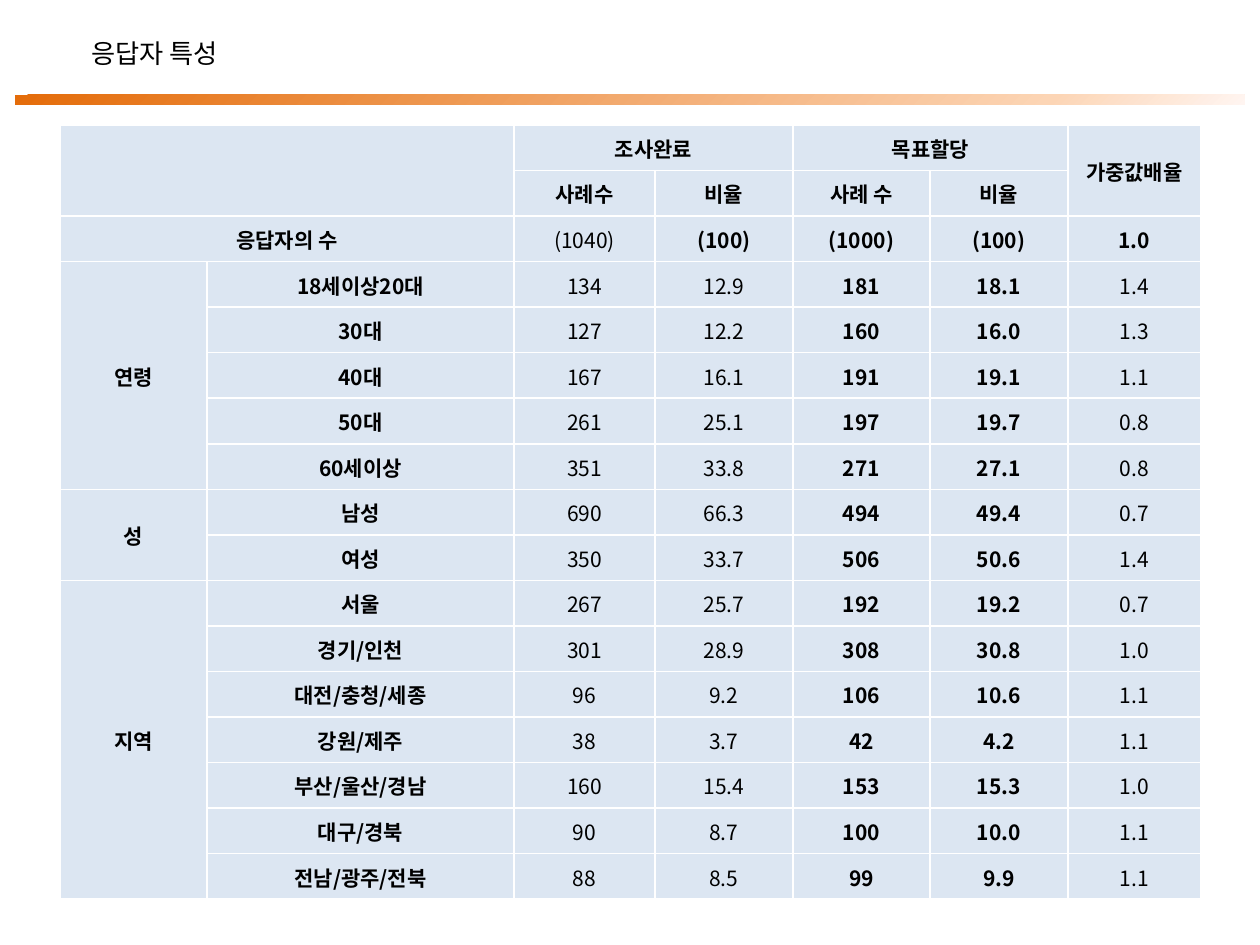
"""Build the respondent profile slide with its weighting table."""
from copy import deepcopy
from dataclasses import dataclass

from lxml import etree
from pptx import Presentation
from pptx.dml.color import RGBColor
from pptx.enum.shapes import MSO_SHAPE
from pptx.enum.text import MSO_ANCHOR, MSO_AUTO_SIZE, PP_ALIGN
from pptx.oxml.ns import qn
from pptx.util import Pt

RECTANGLE = MSO_SHAPE.RECTANGLE
MIDDLE = MSO_ANCHOR.MIDDLE
NO_AUTOFIT = MSO_AUTO_SIZE.NONE
LEFT, CENTER = PP_ALIGN.LEFT, PP_ALIGN.CENTER
PX = 914400 // 126


@dataclass
class Theme:
    font: str = "Noto Sans CJK KR"
    title_size: int = 15
    cell_size: int = 12
    ink: str = "000000"
    cell: str = "DCE6F2"
    border: str = "FFFFFF"
    bar: tuple = ((0, "E46C0A"), (0.84, "FCD5B5"), (1, "FFF5F1"))


theme = Theme()


def style(p, size, bold, align):
    p.alignment = align
    p.font.name = theme.font
    p.font.size = Pt(size)
    p.font.bold = bold
    p.font.color.rgb = RGBColor.from_string(theme.ink)
    latin = p.font._element.find(qn("a:latin"))
    latin.addnext(etree.Element(qn("a:ea"), typeface=theme.font))


def add_borders(cell):
    tcPr = cell._tc.get_or_add_tcPr()
    for side in ("lnL", "lnR", "lnT", "lnB"):
        ln = etree.SubElement(tcPr, qn(f"a:{side}"), w=str(Pt(1)))
        fill = etree.SubElement(ln, qn("a:solidFill"))
        etree.SubElement(fill, qn("a:srgbClr"), val=theme.border)


prs = Presentation()
prs.slide_width, prs.slide_height = 1260 * PX, 945 * PX
s = prs.slides.add_slide(prs.slide_layouts[5])

title = s.shapes.title
title.left, title.top, title.width, title.height = 79 * PX, 31 * PX, 387 * PX, 44 * PX
tf = title.text_frame
tf.text = "응답자 특성"
tf.auto_size = NO_AUTOFIT
tf.vertical_anchor = MIDDLE
style(tf.paragraphs[0], theme.title_size, False, LEFT)

bar = s.shapes.add_shape(RECTANGLE, 15 * PX, 95 * PX, 1230 * PX, 10 * PX)
bar.shadow.inherit = False
bar.line.fill.background()
bar.fill.gradient()
bar.fill.gradient_angle = 315
last_stop = bar.fill._fill._gradFill.find(qn("a:gsLst"))[-1]
last_stop.addnext(deepcopy(last_stop))
for stop, (position, color) in zip(bar.fill.gradient_stops, theme.bar):
    stop.position = position
    stop.color.rgb = RGBColor.from_string(color)

rows = [
    ("", "", "조사완료", "", "목표할당", "", "가중값배율"),
    ("", "", "사례수", "비율", "사례 수", "비율", ""),
    ("응답자의 수", "", "(1040)", "(100)", "(1000)", "(100)", "1.0"),
    ("연령", "18세이상20대", "134", "12.9", "181", "18.1", "1.4"),
    ("", "30대", "127", "12.2", "160", "16.0", "1.3"),
    ("", "40대", "167", "16.1", "191", "19.1", "1.1"),
    ("", "50대", "261", "25.1", "197", "19.7", "0.8"),
    ("", "60세이상", "351", "33.8", "271", "27.1", "0.8"),
    ("성", "남성", "690", "66.3", "494", "49.4", "0.7"),
    ("", "여성", "350", "33.7", "506", "50.6", "1.4"),
    ("지역", "서울", "267", "25.7", "192", "19.2", "0.7"),
    ("", "경기/인천", "301", "28.9", "308", "30.8", "1.0"),
    ("", "대전/충청/세종", "96", "9.2", "106", "10.6", "1.1"),
    ("", "강원/제주", "38", "3.7", "42", "4.2", "1.1"),
    ("", "부산/울산/경남", "160", "15.4", "153", "15.3", "1.0"),
    ("", "대구/경북", "90", "8.7", "100", "10.0", "1.1"),
    ("", "전남/광주/전북", "88", "8.5", "99", "9.9", "1.1"),
]
col_widths = [147, 307, 141, 138, 137, 138, 133]
merges = [
    ((0, 0), (1, 1)), ((0, 2), (0, 3)), ((0, 4), (0, 5)), ((0, 6), (1, 6)),
    ((2, 0), (2, 1)), ((3, 0), (7, 0)), ((8, 0), (9, 0)), ((10, 0), (16, 0)),
]
header_rows, total_row = 2, 2
bold_cols = {0, 1, 4, 5}

table = s.shapes.add_table(
    len(rows), len(col_widths), 60 * PX, 125 * PX, sum(col_widths) * PX, 775 * PX
).table
table.first_row = table.horz_banding = False
for col, width in zip(table.columns, col_widths):
    col.width = width * PX
for row in table.rows:
    row.height = 775 * PX // len(rows)

for r, values in enumerate(rows):
    for c, value in enumerate(values):
        cell = table.cell(r, c)
        cell.text = value
        cell.vertical_anchor = MIDDLE
        cell.margin_left = cell.margin_right = cell.margin_top = PX
        cell.margin_bottom = 0
        add_borders(cell)
        cell.fill.solid()
        cell.fill.fore_color.rgb = RGBColor.from_string(theme.cell)
        bold = r < header_rows or c in bold_cols or (r == total_row and c != 2)
        style(cell.text_frame.paragraphs[0], theme.cell_size, bold, CENTER)

for start, end in merges:
    table.cell(*start).merge(table.cell(*end))

prs.save("out.pptx")
